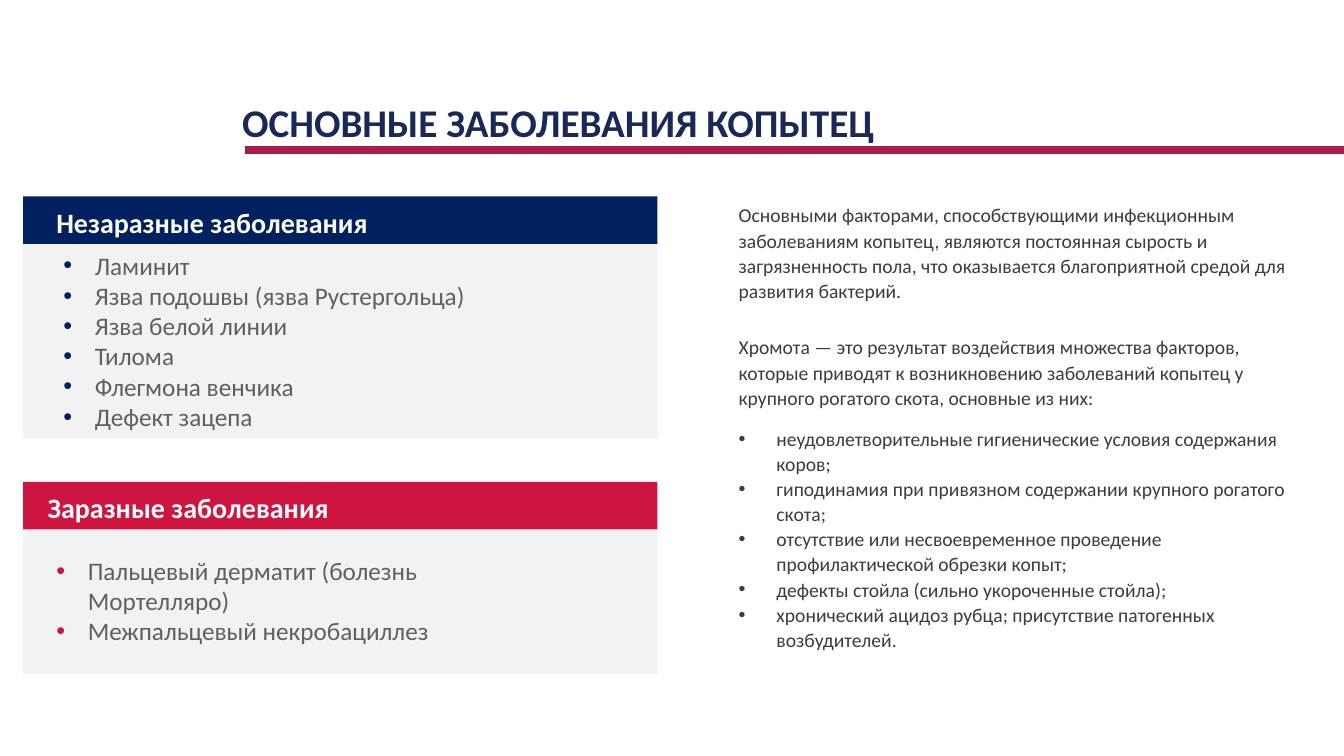
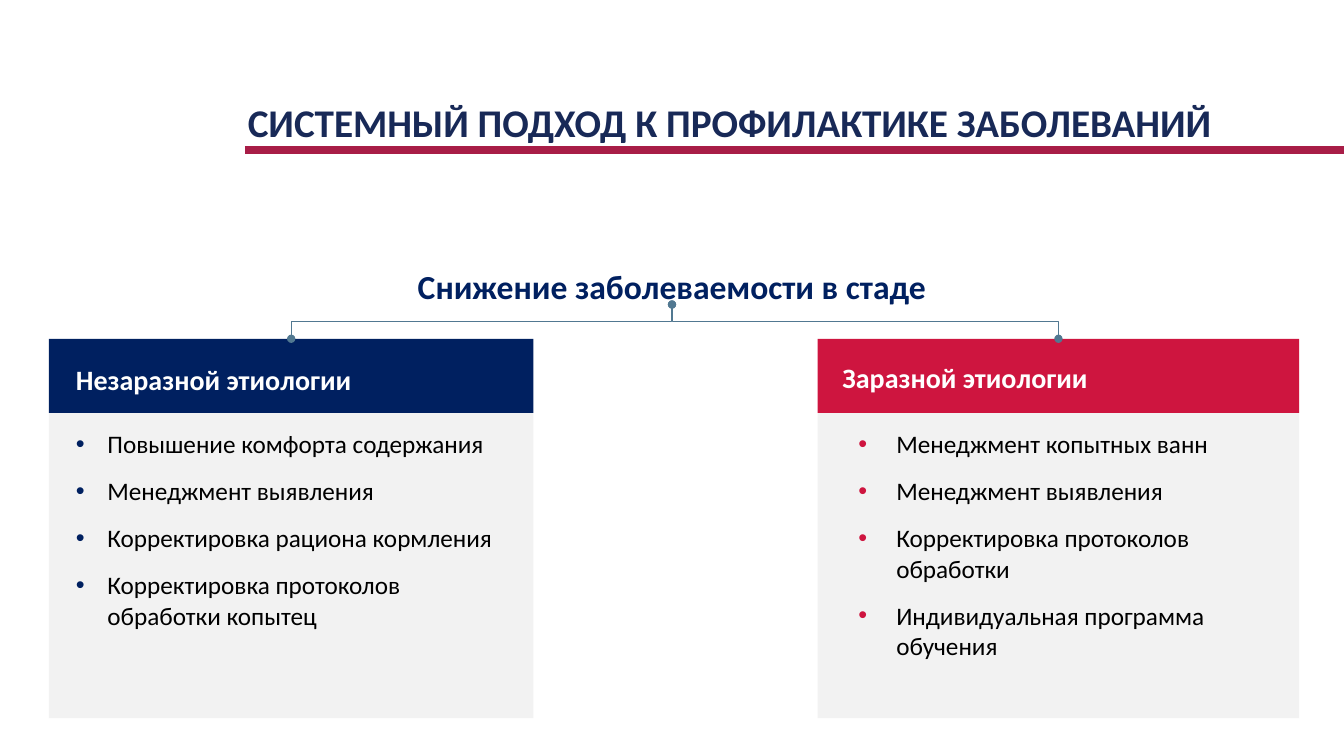
import pptx
import pptx.util
import pptx.dml.color
import pptx.enum.shapes
import pptx.enum.text
import pptx.oxml
import pptx.oxml.ns

Pt = pptx.util.Pt
RGB = pptx.dml.color.RGBColor
Align = pptx.enum.text.PP_ALIGN
Anchor = pptx.enum.text.MSO_ANCHOR
Line = pptx.enum.shapes.MSO_CONNECTOR
qn = pptx.oxml.ns.qn

NAVY = RGB(0x00, 0x20, 0x60)
RED = RGB(0xCE, 0x15, 0x3F)
WINE = RGB(0xA8, 0x1D, 0x47)
INK = RGB(0x18, 0x29, 0x57)
STEEL = RGB(0x51, 0x78, 0x91)
PALE = RGB(0xF2, 0xF2, 0xF2)
GREY = RGB(0x60, 0x60, 0x60)
DARK = RGB(0x3C, 0x3C, 0x3B)
BLACK = RGB(0, 0, 0)
WHITE = RGB(0xFF, 0xFF, 0xFF)
FONT = "Calibri"


def node(host, tag, **attrs):
    """Append an XML child with the given attributes."""
    child = pptx.oxml.parse_xml(f"<{tag} {pptx.oxml.ns.nsdecls('a')}/>")
    for key, value in attrs.items():
        child.set(key, str(value))
    host.append(child)
    return child


def write(shape, lines, size=18, color=BLACK, bold=False, align=Align.LEFT,
          anchor=Anchor.TOP, inset=(7.2, 3.6), dot=None, indent=22.5,
          tab=None, before=0, after=0, spacing=1.0):
    """Add paragraphs to a shape; dot is the bullet colour."""
    frame = shape.text_frame
    frame.word_wrap = True
    frame.auto_size = pptx.enum.text.MSO_AUTO_SIZE.NONE
    frame.vertical_anchor = anchor
    frame.margin_left = frame.margin_right = Pt(inset[0])
    frame.margin_top = frame.margin_bottom = Pt(inset[1])
    for line in lines:
        first = not frame.text
        para = frame.paragraphs[0] if first else frame.add_paragraph()
        para.text = line
        if dot is not None:
            props = para._p.get_or_add_pPr()
            props.set("marL", str(Pt(indent)))
            props.set("indent", str(-Pt(indent)))
            node(node(props, "a:buClr"), "a:srgbClr", val=dot)
            node(props, "a:buFont", typeface="Arial")
            node(props, "a:buChar", char="•")
            if tab:
                node(node(props, "a:tabLst"), "a:tab", pos=Pt(tab), algn="l")
        para.alignment = align
        para.line_spacing = spacing
        para.space_before = Pt(0 if first else before)
        para.space_after = Pt(after)
        para.font.name = FONT
        para.font.size = Pt(size)
        para.font.bold = bold
        para.font.color.rgb = color


class Deck:
    """Shared style and the current slide."""

    def __init__(self):
        self.prs = pptx.Presentation()
        self.prs.slide_width, self.prs.slide_height = Pt(960), Pt(540)
        self.slide = None

    def start(self, title, x):
        """Open a slide with its title and the rule below it."""
        layout = self.prs.slide_layouts.get_by_name("Comparison")
        self.slide = self.prs.slides.add_slide(layout)
        self.link(Line.STRAIGHT, 175, 107.25, 960, 107.25, WINE, 6)
        head = self.place(0, x, 70, 780, 34)
        write(head, [title], size=28, color=INK, bold=True,
              anchor=Anchor.MIDDLE, inset=(0, 0))

    def place(self, index, x, y, w, h):
        """Move a placeholder and bring it to the front."""
        holder = self.slide.placeholders[index]
        holder.left, holder.top = Pt(x), Pt(y)
        holder.width, holder.height = Pt(w), Pt(h)
        holder.element.getparent().append(holder.element)
        return holder

    def text(self, x, y, w, h):
        return self.slide.shapes.add_textbox(Pt(x), Pt(y), Pt(w), Pt(h))

    def rect(self, x, y, w, h, color):
        kind = pptx.enum.shapes.MSO_SHAPE.RECTANGLE
        box = self.slide.shapes.add_shape(kind, Pt(x), Pt(y), Pt(w), Pt(h))
        box.shadow.inherit = False
        box.fill.solid()
        box.fill.fore_color.rgb = color
        box.line.fill.background()

    def link(self, kind, x1, y1, x2, y2, color, width):
        line = self.slide.shapes.add_connector(kind, Pt(x1), Pt(y1),
                                               Pt(x2), Pt(y2))
        line.line.color.rgb = color
        line.line.width = Pt(width)
        node(line.element.spPr, "a:effectLst")
        return line

    def branch(self, x1, y1, x2, y2):
        """Down-across-down elbow: a turned connector with round ends."""
        mid_x, mid_y = (x1 + x2) / 2, (y1 + y2) / 2
        half_w, half_h = (y2 - y1) / 2, abs(x2 - x1) / 2
        right = x2 > x1
        side = half_w if right else -half_w
        line = self.link(Line.ELBOW, mid_x + side, mid_y - half_h,
                         mid_x - side, mid_y + half_h, STEEL, 0.75)
        props = line.element.spPr
        turn = 270 if right else 90
        props.find(qn("a:xfrm")).set("rot", str(turn * 60000))
        for end in ("a:headEnd", "a:tailEnd"):
            node(props.find(qn("a:ln")), end, type="oval")

    def panel(self, slot, area, tone, head, spot, items, field, **style):
        """Coloured header over a pale list; slot 0 or 1."""
        x, y, w, top, low = area
        self.rect(x, y + top, w, low, PALE)
        self.rect(x, y, w, top, tone)
        label = self.place(1 + 2 * slot, *spot, x + w - spot[0], 31.5)
        write(label, [head], size=20, color=WHITE, bold=True)
        body = self.place(2 + 2 * slot, *field)
        write(body, items, dot=tone, **style)


def main():
    deck = Deck()

    # Diseases: two stacked panels and a column of text
    deck.start("ОСНОВНЫЕ ЗАБОЛЕВАНИЯ КОПЫТЕЦ", 173)
    deck.panel(0, (16.5, 140.25, 453, 34, 139), NAVY,
               "Незаразные заболевания", (33, 143.25),
               ["Ламинит", "Язва подошвы (язва Рустергольца)",
                "Язва белой линии", "Тилома", "Флегмона венчика",
                "Дефект зацепа"],
               (38, 175, 325.5, 138), color=GREY)
    deck.panel(1, (16.5, 344.25, 453, 34, 103), RED,
               "Заразные заболевания", (26.75, 347),
               ["Пальцевый дерматит (болезнь Мортелляро)",
                "Межпальцевый некробациллез"],
               (33, 393, 356.5, 94), color=GREY)
    notes = deck.text(520.5, 140.5, 413.5, 331)
    style = dict(size=14, color=DARK, spacing=1.07)
    write(notes, [
        "Основными факторами, способствующими инфекционным заболеваниям "
        "копытец, являются постоянная сырость и загрязненность пола, что "
        "оказывается благоприятной средой для развития бактерий.",
        "Хромота — это результат воздействия множества факторов, которые "
        "приводят к возникновению заболеваний копытец у крупного рогатого "
        "скота, основные из них:"], before=11.2, after=11.2, **style)
    write(notes, [
        "неудовлетворительные гигиенические условия содержания коров;",
        "гиподинамия при привязном содержании крупного рогатого скота;",
        "отсутствие или несвоевременное проведение профилактической "
        "обрезки копыт;",
        "дефекты стойла (сильно укороченные стойла);",
        "хронический ацидоз рубца; присутствие патогенных возбудителей."],
        dot=DARK, indent=27, tab=108, **style)

    # Prevention: one goal branching into two panels
    deck.start("СИСТЕМНЫЙ ПОДХОД К ПРОФИЛАКТИКЕ ЗАБОЛЕВАНИЙ", 177)
    deck.panel(0, (35, 242, 346, 53, 218), NAVY,
               "Незаразной этиологии", (47, 255),
               ["Повышение комфорта содержания", "Менеджмент выявления",
                "Корректировка рациона кормления",
                "Корректировка протоколов обработки копытец"],
               (47, 302.5, 312.5, 153), before=12)
    deck.panel(1, (584, 242, 344, 53, 218), RED,
               "Заразной этиологии", (594.5, 254),
               ["Менеджмент копытных ванн", "Менеджмент выявления",
                "Корректировка протоколов обработки",
                "Индивидуальная программа обучения"],
               (606, 302.5, 312.5, 174), before=12, indent=27)
    goal = deck.text(243.5, 185, 473, 32.5)
    write(goal, ["Снижение заболеваемости в стаде"], size=24, color=NAVY,
          bold=True, align=Align.CENTER, anchor=Anchor.MIDDLE,
          inset=(0, 0), spacing=1.2)
    for end in (756, 208):
        deck.branch(480, 217.5, end, 242)

    deck.prs.save("out.pptx")


if __name__ == "__main__":
    main()
